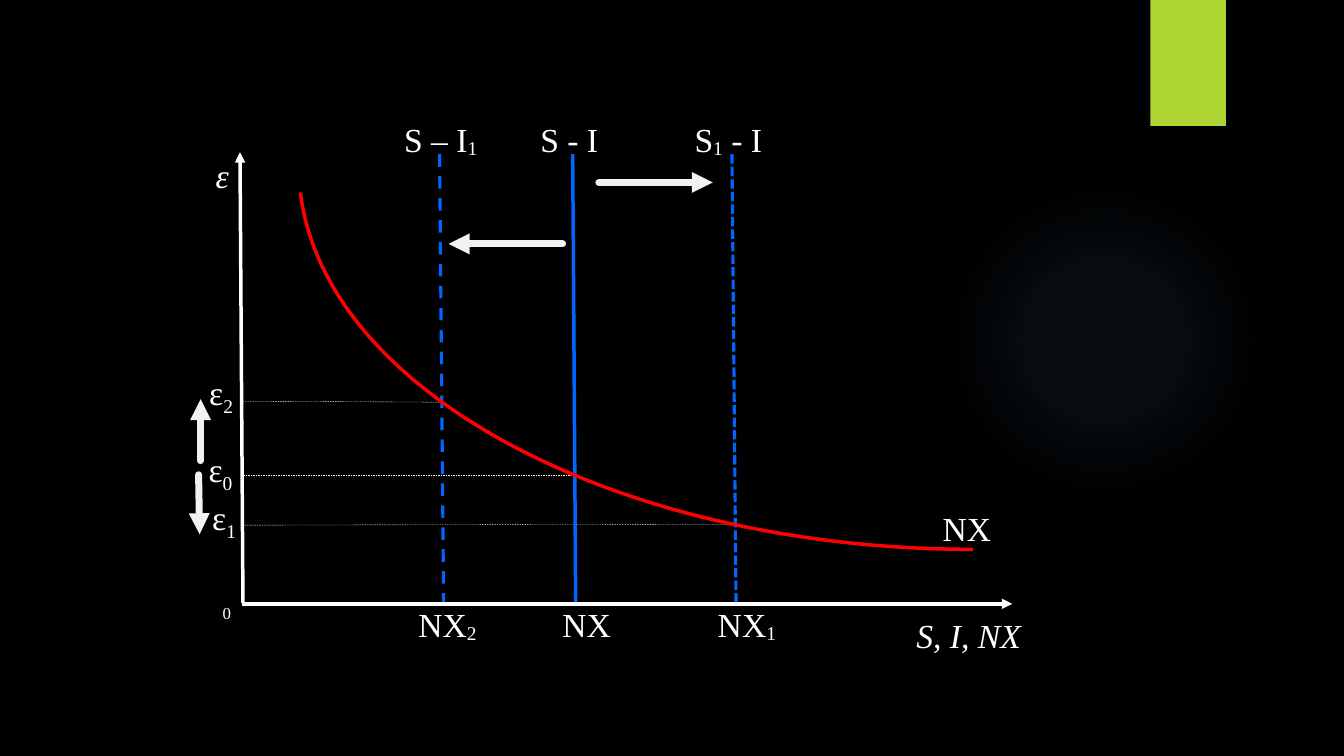
from dataclasses import dataclass

from lxml import etree
from pptx import Presentation
from pptx.dml.color import RGBColor
from pptx.enum.dml import MSO_LINE
from pptx.enum.shapes import MSO_CONNECTOR, MSO_SHAPE
from pptx.enum.text import PP_ALIGN
from pptx.oxml import parse_xml
from pptx.oxml.ns import qn
from pptx.util import Inches, Pt

STRAIGHT = MSO_CONNECTOR.STRAIGHT
RECT, OVAL = MSO_SHAPE.RECTANGLE, MSO_SHAPE.OVAL
DASH, SHORT_DASH = MSO_LINE.DASH, MSO_LINE.SQUARE_DOT
LEFT, RIGHT = PP_ALIGN.LEFT, PP_ALIGN.RIGHT
NS = "http://schemas.openxmlformats.org/drawingml/2006/main"


@dataclass(frozen=True)
class Theme:
    background: str = "000000"
    accent: str = "ACD433"
    glow: str = "7AC4F0"
    ink: str = "FFFFFF"
    arrow: str = "F2F2F2"
    supply: str = "0066FF"
    demand: str = "FF0000"
    font: str = "Times New Roman"
    label: int = 24
    origin: int = 12
    guide_width: float = 0.25
    shift_width: float = 5


THEME = Theme()


def rgb(color):
    return RGBColor.from_string(color)


def add_plain_shape(slide, kind, left, top, width, height, color):
    sp = slide.shapes.add_shape(
        kind, Inches(left), Inches(top), Inches(width), Inches(height))
    sp.shadow.inherit = False
    sp.fill.solid()
    sp.fill.fore_color.rgb = rgb(color)
    sp.line.fill.background()
    return sp


def add_glow(slide, left, top, size):
    """Add a circle whose faint colour fades out from the centre."""
    sp = add_plain_shape(slide, OVAL, left, top, size, size, THEME.glow)
    stops = "".join(
        f'<a:gs pos="{pos * 1000}"><a:srgbClr val="{THEME.glow}">'
        f'<a:alpha val="{alpha * 1000}"/></a:srgbClr></a:gs>'
        for pos, alpha in ((0, 7), (36, 6), (69, 0)))
    gradient = parse_xml(
        f'<a:gradFill xmlns:a="{NS}" rotWithShape="1"><a:gsLst>{stops}</a:gsLst>'
        '<a:path path="circle"><a:fillToRect l="50000" t="50000" r="50000" '
        'b="50000"/></a:path></a:gradFill>')
    spPr = sp._element.spPr
    spPr.replace(spPr.find(qn("a:solidFill")), gradient)


def add_line(slide, start, end, color, width, dash=None, arrow=False,
             round_cap=False):
    line = slide.shapes.add_connector(
        STRAIGHT, *(Inches(v) for v in (*start, *end)))
    line.line.color.rgb = rgb(color)
    line.line.width = Pt(width)
    if dash:
        line.line.dash_style = dash
    ln = line._element.spPr.find(qn("a:ln"))
    if round_cap:
        ln.set("cap", "rnd")
    if arrow:
        etree.SubElement(ln, qn("a:tailEnd"), type="triangle")
    etree.SubElement(line._element.spPr, qn("a:effectLst"))


def add_curve(slide, points, color, width):
    """Add an open cubic curve: start, two control points within its bounds, end."""
    start, *others = [(Inches(x), Inches(y)) for x, y in points]
    builder = slide.shapes.build_freeform(*start)
    builder.add_line_segments(others, close=False)
    sp = builder.convert_to_shape()
    sp.shadow.inherit = False
    sp.fill.background()
    sp.line.color.rgb = rgb(color)
    sp.line.width = Pt(width)
    segments = list(sp._element.iter(qn("a:lnTo")))
    curve = etree.SubElement(segments[0].getparent(), qn("a:cubicBezTo"))
    for segment in segments:
        curve.append(segment[0])
        segment.getparent().remove(segment)


def add_text(slide, text, left, top, width, height, size=THEME.label,
             italic=False, align=LEFT, drop=-10, wrap=True):
    """Add a label; the character after each underscore is a subscript."""
    box = slide.shapes.add_textbox(
        Inches(left), Inches(top), Inches(width), Inches(height))
    tf = box.text_frame
    tf.word_wrap = wrap
    p = tf.paragraphs[0]
    p.alignment = align
    first, *rest = text.split("_")
    runs = [(first, 0)]
    for part in rest:
        runs += [(part[0], drop), (part[1:], 0)]
    for content, baseline in runs:
        if not content:
            continue
        r = p.add_run()
        r.text = content
        r.font.name = THEME.font
        r.font.size = Pt(size)
        r.font.italic = italic
        r.font.color.rgb = rgb(THEME.ink)
        if baseline:
            r._r.get_or_add_rPr().set("baseline", str(baseline * 1000))


def add_guides(slide):
    for start, end in (((5.7, 4.71), (2.4, 4.71)),
                       ((7.3, 5.2), (2.41, 5.21)),
                       ((4.38, 3.99), (2.4, 3.98))):
        add_line(slide, start, end, THEME.ink, THEME.guide_width, DASH)


def add_axes(slide):
    for start, end in (((2.4, 5.99), (10.04, 5.99)),
                       ((2.41, 5.98), (2.38, 1.51))):
        add_line(slide, start, end, THEME.ink, 2.5, arrow=True)


def add_supply_lines(slide):
    for top_x, bottom_x, width, dash in ((5.68, 5.71, 2.5, None),
                                         (4.36, 4.4, 2.25, DASH),
                                         (7.26, 7.3, 2.25, SHORT_DASH)):
        add_line(slide, (top_x, 1.53), (bottom_x, 6), THEME.supply, width, dash)


def add_shift_arrows(slide):
    for start, end in (((5.58, 2.42), (4.45, 2.42)),
                       ((5.94, 1.81), (7.07, 1.81)),
                       ((1.99, 4.57), (1.99, 3.96)),
                       ((1.97, 4.71), (1.98, 5.3))):
        add_line(slide, start, end, THEME.arrow, THEME.shift_width,
                 arrow=True, round_cap=True)


def add_labels(slide):
    for text, left, width in (("S – I_1", 3.91, 1), ("S - I", 5.26, 0.85),
                              ("S_1 - I", 6.79, 1.19)):
        add_text(slide, text, left, 1.13, width, 0.5)
    for text, left in (("NX_2", 4.05), ("NX", 5.48), ("NX_1", 7.02)):
        add_text(slide, text, left, 5.94, 0.85, 0.46)
    for text, left, top, width, align in (("ε_2", 1.77, 3.64, 0.64, RIGHT),
                                          ("ε_0", 1.97, 4.4, 0.46, LEFT),
                                          ("ε_1", 1.3, 4.88, 1.14, RIGHT)):
        add_text(slide, text, left, top, width, 0.55, align=align, drop=-25)
    add_text(slide, "NX", 9.25, 4.99, 0.85, 0.36)
    add_text(slide, "ε", 2.04, 1.49, 0.27, 0.4, italic=True)
    add_text(slide, "S, I, NX", 8.99, 6.05, 1.32, 0.36, italic=True)
    add_text(slide, "0", 2.11, 5.93, 0.26, 0.3, size=THEME.origin, wrap=False)


def main():
    prs = Presentation()
    prs.slide_width, prs.slide_height = Inches(13.33), Inches(7.5)
    slide = prs.slides.add_slide(prs.slide_layouts[6])
    slide.background.fill.solid()
    slide.background.fill.fore_color.rgb = rgb(THEME.background)
    add_glow(slide, 9.41, 1.83, 3.08)
    add_plain_shape(slide, RECT, 11.41, 0, 0.75, 1.25, THEME.accent)
    add_guides(slide)
    add_supply_lines(slide)
    add_curve(slide, ((9.65, 5.45), (6.14, 5.45), (3.22, 3.9), (2.98, 1.91)),
              THEME.demand, 2.5)
    add_axes(slide)
    add_shift_arrows(slide)
    add_labels(slide)
    prs.save("out.pptx")


if __name__ == "__main__":
    main()
